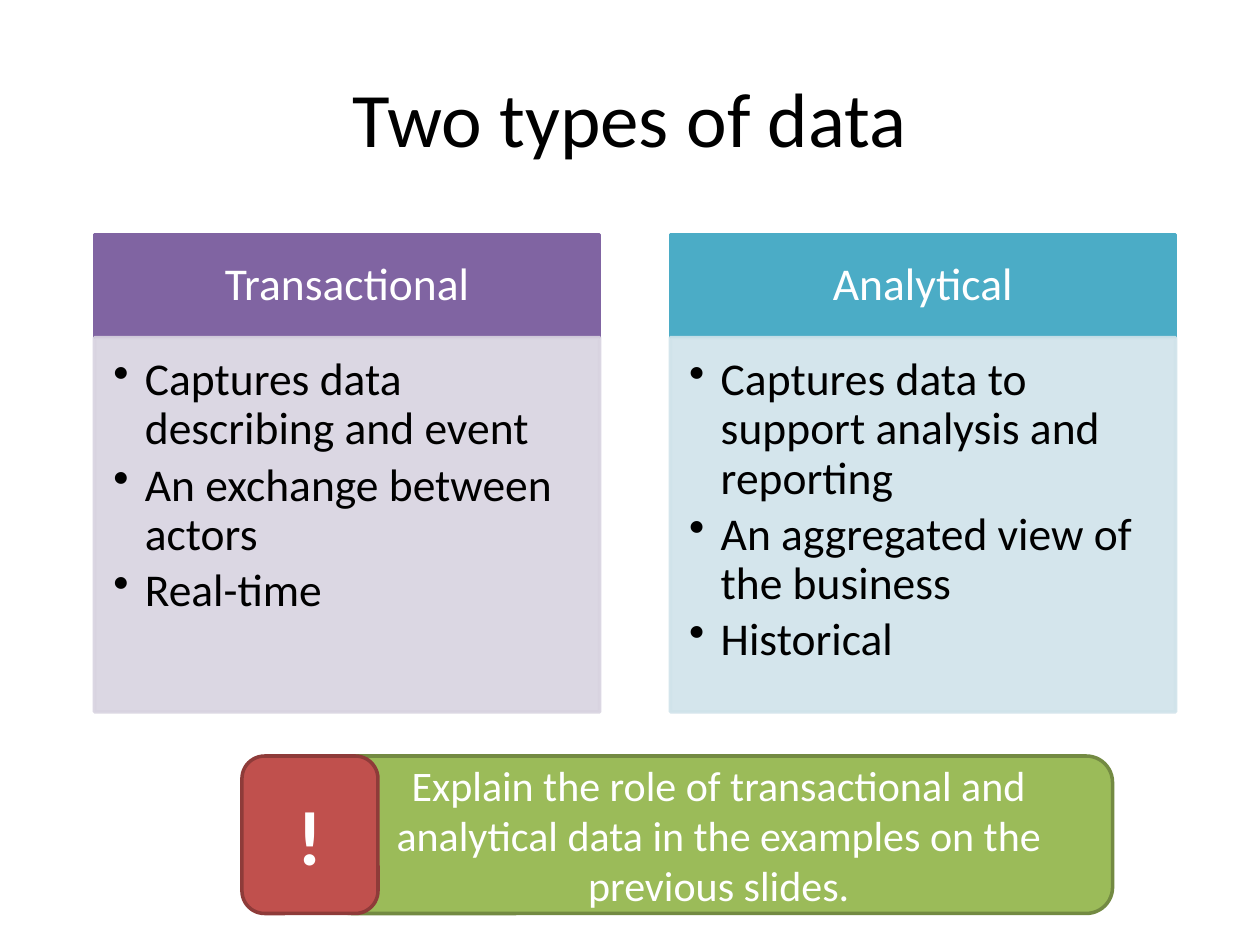
import pptx
import pptx.dml.color
import pptx.enum.shapes
import pptx.enum.text
import pptx.oxml
import pptx.oxml.ns
import pptx.util

PX = 9144  # EMU per px, 100 px to the inch
SHAPES = pptx.enum.shapes.MSO_SHAPE
ALIGN = pptx.enum.text.PP_ALIGN
ANCHOR = pptx.enum.text.MSO_ANCHOR
COLORS = {
    "black": "000000", "white": "FFFFFF",
    "purple": "8064A2", "pale purple": "D8D3E0",
    "teal": "4BACC6", "pale teal": "D0E3EA",
    "green": "9BBB59", "dark green": "738A42",
    "red": "C0504D", "dark red": "8E3B39",
}
COLUMNS = [
    ("Transactional", "purple",
     ["Captures data describing and event",
      "An exchange between actors",
      "Real-time"]),
    ("Analytical", "teal",
     ["Captures data to support analysis and reporting",
      "An aggregated view of the business",
      "Historical"]),
]
COLUMN_LEFT, COLUMN_STEP, COLUMN_WIDTH = 75, 457, 401
HEADER_TOP, HEADER_HEIGHT, BODY_HEIGHT = 186, 82, 297
CALLOUT_TOP, CALLOUT_HEIGHT = 600, 125


def rgb(name):
    return pptx.dml.color.RGBColor.from_string(COLORS[name])


def set_all(target, values):
    for attribute, value in values.items():
        setattr(target, attribute, value)


class SlideBuilder:
    def __init__(self, slide, font="Calibri"):
        self.slide = slide
        self.font = font

    def place(self, shape, box):
        names = ("left", "top", "width", "height")
        set_all(shape, {name: px * PX for name, px in zip(names, box)})

    def fill_text(self, frame, lines, size, color, align=ALIGN.CENTER,
                  anchor=ANCHOR.MIDDLE, margins=(10, 5, 10, 5), bold=False, spacing=None):
        sides = ("margin_left", "margin_top", "margin_right", "margin_bottom")
        set_all(frame, {side: px * PX for side, px in zip(sides, margins)})
        set_all(frame, {"word_wrap": True, "vertical_anchor": anchor})
        frame.text = "\n".join(lines)
        for paragraph in frame.paragraphs:
            set_all(paragraph, {"alignment": align, "line_spacing": spacing})
            for run in paragraph.runs:
                set_all(run.font, {"name": self.font, "bold": bold,
                                   "size": pptx.util.Pt(size)})
                run.font.color.rgb = rgb(color)

    def title(self, text, box):
        heading = self.slide.shapes.title
        self.place(heading, box)
        self.fill_text(heading.text_frame, [text], 44, "black")

    def block(self, kind, box, fill, line, lines, size, color="white", **style):
        shape = self.slide.shapes.add_shape(kind, *(px * PX for px in box))
        shape.shadow.inherit = False
        shape.fill.solid()
        shape.fill.fore_color.rgb = rgb(fill)
        shape.line.color.rgb = rgb(line)
        shape.line.width = pptx.util.Pt(2)
        self.fill_text(shape.text_frame, lines, size, color, **style)
        return shape

    def bullet_block(self, box, fill, lines):
        shape = self.block(SHAPES.RECTANGLE, box, fill, fill, lines, 26, "black",
                           align=ALIGN.LEFT, anchor=ANCHOR.TOP,
                           margins=(15, 15, 20, 23), spacing=0.9)
        self.fade(shape, 90)
        for paragraph in shape.text_frame.paragraphs:
            set_all(paragraph, {"level": 1, "space_after": pptx.util.Pt(4)})
            properties = paragraph._p.get_or_add_pPr()
            properties.set("marL", str(25 * PX))
            properties.set("indent", str(-25 * PX))
            bullet = pptx.oxml.parse_xml(
                f'<a:buChar {pptx.oxml.ns.nsdecls("a")} char="•"/>')
            properties.append(bullet)

    def fade(self, shape, percent):
        """Give the fill and the line of a shape the same opacity."""
        for color in shape._element.spPr.iter(pptx.oxml.ns.qn("a:srgbClr")):
            color.append(pptx.oxml.parse_xml(
                f'<a:alpha {pptx.oxml.ns.nsdecls("a")} val="{percent * 1000}"/>'))


def main():
    deck = pptx.Presentation()
    set_all(deck, {"slide_width": 1000 * PX, "slide_height": 750 * PX})
    builder = SlideBuilder(deck.slides.add_slide(deck.slide_layouts[5]))
    builder.title("Two types of data", (50, 30, 900, 125))

    for index, (heading, color, points) in enumerate(COLUMNS):
        left = COLUMN_LEFT + index * COLUMN_STEP
        builder.block(SHAPES.RECTANGLE, (left, HEADER_TOP, COLUMN_WIDTH, HEADER_HEIGHT),
                      color, color, [heading], 26, margins=(20, 12, 20, 12), spacing=0.9)
        builder.bullet_block(
            (left, HEADER_TOP + HEADER_HEIGHT, COLUMN_WIDTH, BODY_HEIGHT),
            f"pale {color}", points)

    task = ("Explain the role of transactional and analytical data "
            "in the examples on the previous slides.")
    builder.block(SHAPES.ROUNDED_RECTANGLE, (258, CALLOUT_TOP, 625, CALLOUT_HEIGHT),
                  "green", "dark green", [task], 24)
    builder.block(SHAPES.ROUNDED_RECTANGLE, (192, CALLOUT_TOP, 108, CALLOUT_HEIGHT),
                  "red", "dark red", ["!"], 44, bold=True)
    deck.save("out.pptx")


if __name__ == "__main__":
    main()
